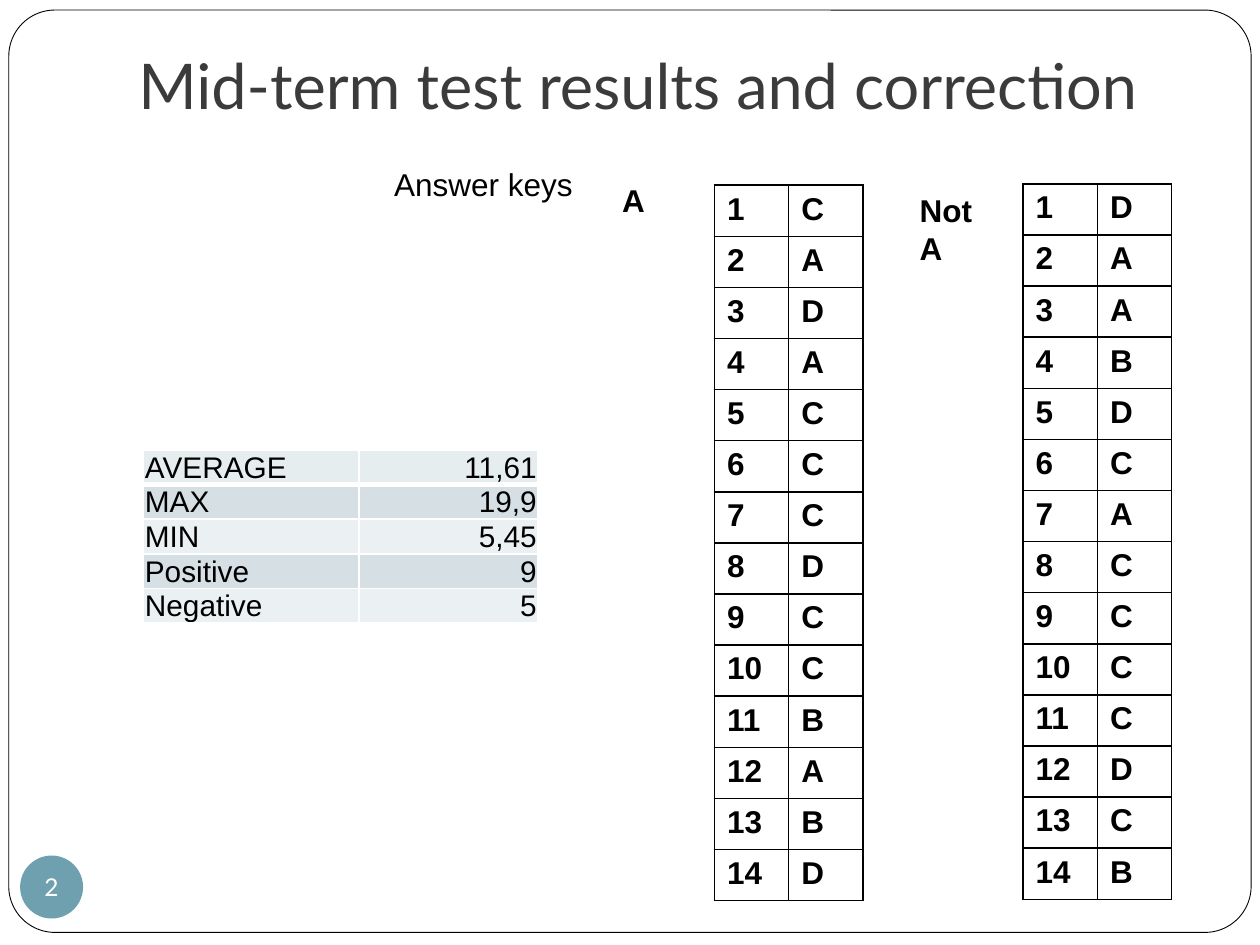
from lxml import etree
from pptx import Presentation
from pptx.dml.color import RGBColor
from pptx.enum.shapes import MSO_SHAPE
from pptx.enum.text import MSO_ANCHOR, PP_ALIGN
from pptx.oxml.ns import qn
from pptx.util import Inches, Pt

LEFT, CENTER, RIGHT = PP_ALIGN.LEFT, PP_ALIGN.CENTER, PP_ALIGN.RIGHT
TOP, MIDDLE, BOTTOM = MSO_ANCHOR.TOP, MSO_ANCHOR.MIDDLE, MSO_ANCHOR.BOTTOM

BLACK = RGBColor(0x00, 0x00, 0x00)
WHITE = RGBColor(0xFF, 0xFF, 0xFF)
TITLE_GRAY = RGBColor(0x3B, 0x3B, 0x3B)
BADGE_BLUE = RGBColor(0x6E, 0xA0, 0xB0)
FIRST_ROW = RGBColor(0xE5, 0xED, 0xEF)
DARK_BAND = RGBColor(0xD5, 0xDF, 0xE4)
LIGHT_BAND = RGBColor(0xEB, 0xF0, 0xF2)


def write(text_frame, text, size, font="Arial", color=BLACK, bold=False, align=LEFT):
    paragraph = text_frame.paragraphs[0]
    paragraph.alignment = align
    run = paragraph.add_run()
    run.text = text
    run.font.name = font
    run.font.size = Pt(size)
    run.font.bold = bold
    run.font.color.rgb = color


def add_grid(left, top, column_widths, row_height, row_count, border_color, heavy_row=None):
    """Add an unstyled table with 1 pt borders, 3 pt below heavy_row and above the next."""
    frame = slide.shapes.add_table(
        row_count, len(column_widths), Inches(left), Inches(top),
        Inches(sum(column_widths)), Inches(row_height * row_count))
    table = frame.table
    table.first_row = False
    table.horz_banding = False
    for column, width in zip(table.columns, column_widths):
        column.width = Inches(width)
    for row_index, row in enumerate(table.rows):
        row.height = Inches(row_height)
        for cell in row.cells:
            properties = cell._tc.get_or_add_tcPr()
            for side in ("lnL", "lnR", "lnT", "lnB"):
                heavy = heavy_row is not None and (
                    (side == "lnB" and row_index == heavy_row)
                    or (side == "lnT" and row_index == heavy_row + 1))
                line = etree.SubElement(properties, qn(f"a:{side}"), w=str(Pt(3 if heavy else 1)))
                fill = etree.SubElement(line, qn("a:solidFill"))
                etree.SubElement(fill, qn("a:srgbClr"), val=str(border_color))
            cell.fill.background()
    return table


presentation = Presentation()
presentation.slide_width = Inches(10)
presentation.slide_height = Inches(7.5)
slide = presentation.slides.add_slide(presentation.slide_layouts[6])

# Page frame
page_frame = slide.shapes.add_shape(
    MSO_SHAPE.ROUNDED_RECTANGLE, Inches(0.07), Inches(0.08), Inches(9.86), Inches(7.32))
page_frame.adjustments[0] = 0.05
page_frame.shadow.inherit = False
page_frame.fill.solid()
page_frame.fill.fore_color.rgb = WHITE
page_frame.line.color.rgb = BLACK
page_frame.line.width = Pt(0.5)

# Score statistics
statistics = [("AVERAGE", "11,61"), ("MAX", "19,9"), ("MIN", "5,45"),
              ("Positive", "9"), ("Negative", "5")]
row_fills = [FIRST_ROW, DARK_BAND, LIGHT_BAND, DARK_BAND, LIGHT_BAND]
statistics_table = add_grid(1.14, 3.57, (1.71, 1.42), 0.27, len(statistics), WHITE, heavy_row=0)
for row, values, row_fill in zip(statistics_table.rows, statistics, row_fills):
    for cell, value, align in zip(row.cells, values, (LEFT, RIGHT)):
        cell.fill.solid()
        cell.fill.fore_color.rgb = row_fill
        cell.vertical_anchor = BOTTOM
        cell.margin_left = cell.margin_right = cell.margin_top = Inches(0.01)
        cell.margin_bottom = 0
        write(cell.text_frame, value, 17, align=align)

# Slide number badge
badge = slide.shapes.add_shape(
    MSO_SHAPE.OVAL, Inches(0.16), Inches(6.79), Inches(0.5), Inches(0.5))
badge.shadow.inherit = False
badge.fill.solid()
badge.fill.fore_color.rgb = BADGE_BLUE
badge.line.fill.background()
badge_text = badge.text_frame
badge_text.word_wrap = False
badge_text.vertical_anchor = MIDDLE
badge_text.margin_left = badge_text.margin_right = 0
badge_text.margin_top = badge_text.margin_bottom = 0
write(badge_text, "2", 14, "Lato", WHITE, align=CENTER)

# Title
title = slide.shapes.add_textbox(Inches(1), Inches(0.3), Inches(8.5), Inches(0.77))
title.text_frame.word_wrap = True
title.text_frame.vertical_anchor = BOTTOM
title.text_frame.margin_bottom = Inches(0.1)
write(title.text_frame, "Mid-term test results and correction", 36, "Lato", TITLE_GRAY)

# Labels
labels = [
    ("Answer keys", 3.03, 1.26, 1.63, 0.4, False),
    ("A", 4.84, 1.39, 0.63, 0.4, True),
    ("Not A", 7.2, 1.47, 0.85, 0.71, True),
]
for text, left, top, width, height, bold in labels:
    label = slide.shapes.add_textbox(Inches(left), Inches(top), Inches(width), Inches(height))
    label.text_frame.word_wrap = bold
    label.text_frame.vertical_anchor = TOP
    write(label.text_frame, text, 18, bold=bold)

# Answer keys
for left, top, answers in [(5.67, 1.47, "CADACCCDCCBABD"), (8.12, 1.46, "DAABDCACCCCDCB")]:
    answer_table = add_grid(left, top, (0.59, 0.59), 5.68 / len(answers), len(answers), BLACK)
    for number, answer in enumerate(answers, start=1):
        for column, value in enumerate((str(number), answer)):
            write(answer_table.cell(number - 1, column).text_frame, value, 18, bold=True)

presentation.save("out.pptx")
